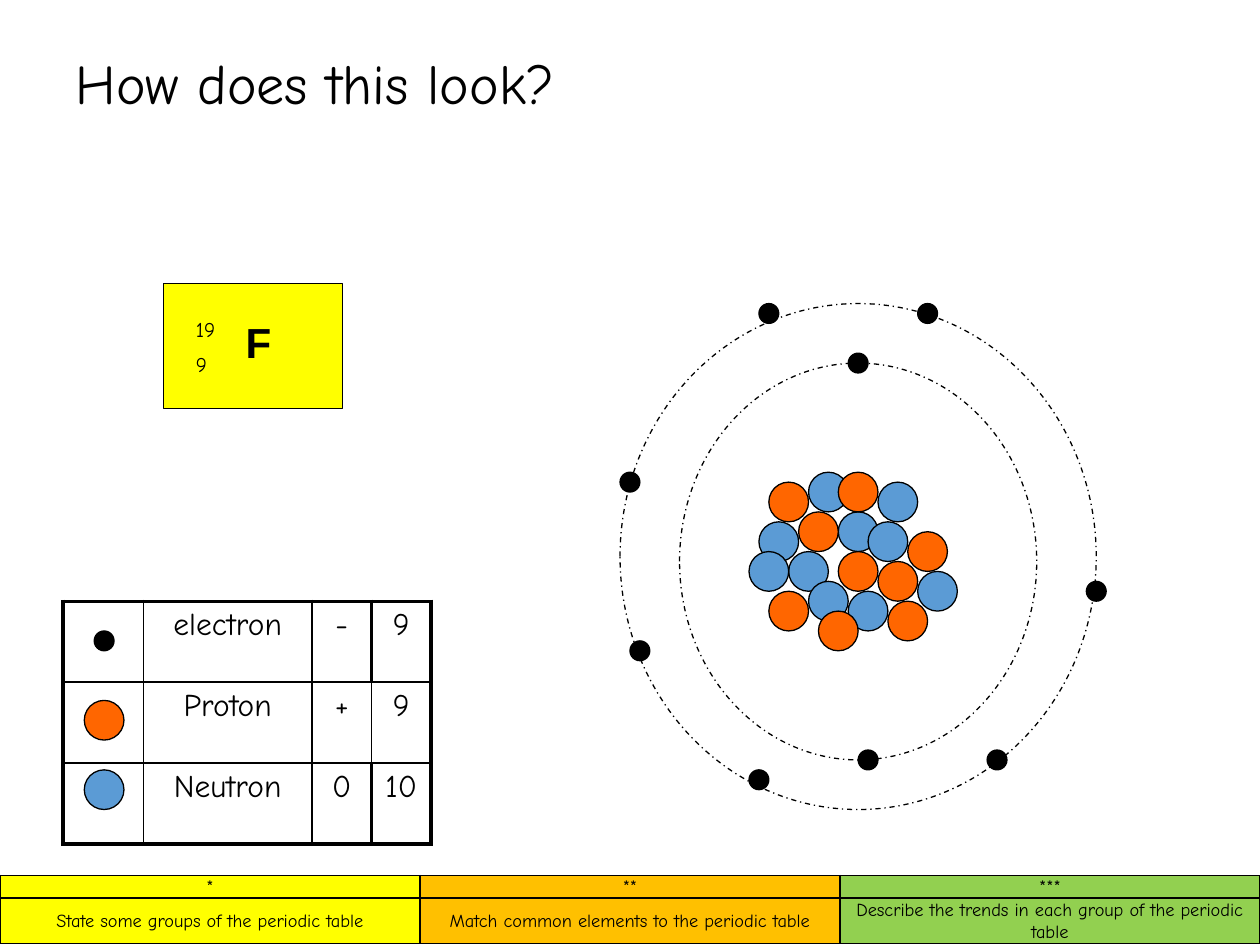
from lxml.etree import SubElement
from pptx import Presentation
from pptx.dml.color import RGBColor
from pptx.enum.dml import MSO_LINE
from pptx.enum.shapes import MSO_SHAPE
from pptx.enum.text import MSO_ANCHOR, PP_ALIGN
from pptx.oxml.ns import qn
from pptx.util import Cm, Pt

COLOURS = {"black": "000000", "yellow": "FFFF00", "amber": "FFC000",
           "green": "92D050", "proton": "FF6600", "neutron": "5B9BD5"}
FONT = "Comic Neue"
THIN, THICK = 1, 2.25
# Particle kind: diameter in cm and colour
PARTICLES = {"electron": (0.4, "black"), "neutron": (0.8, "neutron"),
             "proton": (0.8, "proton")}

# Left and top of each particle in cm
LEGEND = {"electron": [(1.9, 12.72)], "neutron": [(1.7, 15.52)],
          "proton": [(1.7, 14.12)]}
ATOM = {
    "neutron": [(15.3, 10.52), (15.9, 11.12), (16.3, 9.52), (16.9, 10.32),
                (15.1, 11.12), (18.5, 11.52), (17.5, 10.52), (16.3, 11.72),
                (17.1, 11.92), (17.7, 9.72)],
    "proton": [(16.9, 11.12), (17.7, 11.32), (15.5, 11.92), (16.1, 10.32),
               (16.9, 9.52), (18.3, 10.72), (15.5, 9.72), (16.5, 12.32),
               (17.9, 12.12)],
    "electron": [(19.9, 15.12), (21.9, 11.72), (18.5, 6.12), (15.3, 6.12),
                 (12.5, 9.52), (12.7, 12.92), (15.1, 15.52), (17.3, 15.12),
                 (17.1, 7.12)],
}
ORBITS = [(13.7, 7.32, 7.2, 8), (12.5, 6.12, 9.6, 10.2)]
COUNTS = [("", "electron", "-", "9"),
          ("", "Proton", "+", "9"),
          ("", "Neutron", "0", "10")]
GOALS = [("*", "**", "***"),
         ("State some groups of the periodic table",
          "Match common elements to the periodic table",
          "Describe the trends in each group of the periodic table")]
GOAL_FILLS = ("yellow", "amber", "green")


def colour(name):
    return RGBColor.from_string(COLOURS[name])


def set_all(target, values):
    for name, value in values.items():
        setattr(target, name, value)


def format_paragraph(paragraph, size, font=FONT, bold=False, **layout):
    set_all(paragraph.font, {"size": Pt(size), "name": font, "bold": bold})
    paragraph.font.color.rgb = colour("black")
    set_all(paragraph, layout)


def add_title(slide, text):
    title = slide.shapes.title
    set_all(title, {"left": Cm(1.27), "top": Cm(0.76),
                    "width": Cm(22.86), "height": Cm(3.18)})
    frame = title.text_frame
    frame.text = text
    set_all(frame, {"vertical_anchor": MSO_ANCHOR.TOP, "margin_top": Cm(0.38)})
    format_paragraph(frame.paragraphs[0], 32, alignment=PP_ALIGN.LEFT,
                     line_spacing=0.9)


def add_outlined_shape(slide, kind, box, fill=None, dash=None):
    shape = slide.shapes.add_shape(kind, *map(Cm, box))
    shape.shadow.inherit = False
    if fill:
        shape.fill.solid()
        shape.fill.fore_color.rgb = colour(fill)
    else:
        shape.fill.background()
    shape.line.color.rgb = colour("black")
    set_all(shape.line, {"width": Pt(0.75), "dash_style": dash})


def add_particles(slide, groups):
    for kind, places in groups.items():
        diameter, fill = PARTICLES[kind]
        for left, top in places:
            add_outlined_shape(slide, MSO_SHAPE.OVAL,
                               (left, top, diameter, diameter), fill)


def add_label(slide, box, lines, size, **style):
    frame = slide.shapes.add_textbox(*map(Cm, box)).text_frame
    frame.word_wrap = True
    frame.text = "\n".join(lines)
    for index, paragraph in enumerate(frame.paragraphs):
        format_paragraph(paragraph, size,
                         space_before=Pt(size / 2 if index else 0), **style)


def add_element_card(slide):
    add_outlined_shape(slide, MSO_SHAPE.RECTANGLE, (3.3, 5.72, 3.6, 2.51), "yellow")
    add_label(slide, (3.7, 6.25, 1.4, 1.52), ["19", "9"], 12)
    add_label(slide, (4.7, 6.25, 2, 1.27), ["F"], 24, font="Arial", bold=True)


def set_borders(cell, widths):
    """Draw black borders; widths maps L, R, T, B to points."""
    properties = cell._tc.get_or_add_tcPr()
    for side in "LRTB":
        line = SubElement(properties, qn(f"a:ln{side}"), w=str(Pt(widths[side])))
        fill = SubElement(line, qn("a:solidFill"))
        SubElement(fill, qn("a:srgbClr"), val=COLOURS["black"])


def add_table(slide, left, top, columns, rows, texts):
    """Add an unstyled table and return its cells, row by row."""
    frame = slide.shapes.add_table(len(rows), len(columns), Cm(left), Cm(top),
                                   Cm(sum(columns)), Cm(sum(rows)))
    table = frame.table
    set_all(table, {"first_row": False, "horz_banding": False})
    for column, width in zip(table.columns, columns):
        column.width = Cm(width)
    for row, height in zip(table.rows, rows):
        row.height = Cm(height)
    for row, row_texts in zip(table.rows, texts):
        for cell, text in zip(row.cells, row_texts):
            cell.text = text
    return [list(row.cells) for row in table.rows]


def add_goals(slide):
    cells = add_table(slide, 0, 17.65, [25.4 / 3] * 3, [0.44, 0.92], GOALS)
    for row in cells:
        for cell, fill in zip(row, GOAL_FILLS):
            set_borders(cell, dict.fromkeys("LRTB", THIN))
            cell.fill.solid()
            cell.fill.fore_color.rgb = colour(fill)
            set_all(cell, {"vertical_anchor": MSO_ANCHOR.MIDDLE,
                           "margin_left": Cm(0.18), "margin_right": Cm(0.18),
                           "margin_top": 0, "margin_bottom": 0})
            format_paragraph(cell.text_frame.paragraphs[0], 10.5,
                             alignment=PP_ALIGN.CENTER, line_spacing=1.07)


def add_counts(slide):
    cells = add_table(slide, 1.27, 12.12, [1.62, 3.4, 1.2, 1.2], [1.63] * 3, COUNTS)
    for row_index, row in enumerate(cells):
        for column_index, cell in enumerate(row):
            divider = row_index != 1
            thick = {"L": column_index == 0 or (column_index == 3 and divider),
                     "R": column_index == 3 or (column_index == 2 and divider),
                     "T": row_index == 0, "B": row_index == 2}
            set_borders(cell, {side: THICK if heavy else THIN
                               for side, heavy in thick.items()})
            cell.fill.background()
            format_paragraph(cell.text_frame.paragraphs[0], 18,
                             alignment=PP_ALIGN.CENTER)


def main():
    presentation = Presentation()
    set_all(presentation, {"slide_width": Cm(25.4), "slide_height": Cm(19.05)})
    slide = presentation.slides.add_slide(presentation.slide_layouts[5])
    add_goals(slide)
    add_title(slide, "How does this look?")
    add_element_card(slide)
    add_counts(slide)
    add_particles(slide, LEGEND)
    add_particles(slide, ATOM)
    for orbit in ORBITS:
        add_outlined_shape(slide, MSO_SHAPE.OVAL, orbit, dash=MSO_LINE.DASH_DOT)
    presentation.save("out.pptx")


if __name__ == "__main__":
    main()
